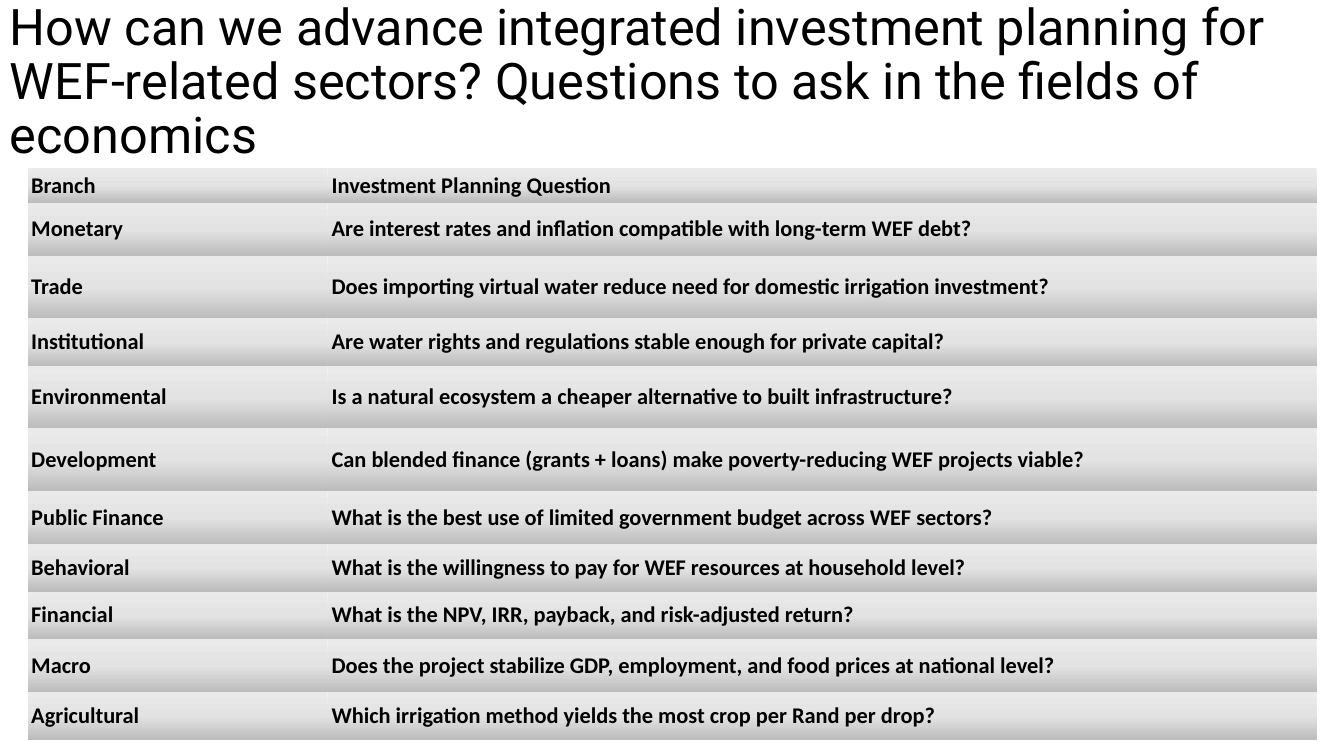
from copy import deepcopy

from pptx import Presentation
from pptx.dml.color import RGBColor
from pptx.enum.text import MSO_ANCHOR, MSO_AUTO_SIZE
from pptx.oxml.ns import qn
from pptx.util import Pt

MIDDLE = MSO_ANCHOR.MIDDLE
NO_FIT = MSO_AUTO_SIZE.NONE
PX = 9144
PLAIN = "{2D5ABB26-0587-4C30-8999-92F81FD0307C}"
INK = "000000"
SHADE = [(0, "EBEAEA"), (0.5, "E4E3E3"), (1, "BDBCBC")]

TITLE = ("How can we advance integrated investment planning for WEF-related sectors? "
         "Questions to ask in the fields of economics")
ROWS = [
    (34, "Branch", "Investment Planning Question"),
    (53, "Monetary", "Are interest rates and inflation compatible with long-term WEF debt?"),
    (62, "Trade", "Does importing virtual water reduce need for domestic irrigation investment?"),
    (47, "Institutional", "Are water rights and regulations stable enough for private capital?"),
    (62, "Environmental", "Is a natural ecosystem a cheaper alternative to built infrastructure?"),
    (62, "Development", "Can blended finance (grants + loans) make poverty-reducing WEF projects viable?"),
    (53, "Public Finance", "What is the best use of limited government budget across WEF sectors?"),
    (47, "Behavioral", "What is the willingness to pay for WEF resources at household level?"),
    (47, "Financial", "What is the NPV, IRR, payback, and risk-adjusted return?"),
    (53, "Macro", "Does the project stabilize GDP, employment, and food prices at national level?"),
    (47, "Agricultural", "Which irrigation method yields the most crop per Rand per drop?"),
]


def hue(code):
    """Turn a hex string into a colour."""
    return RGBColor.from_string(code)


def apply(item, values):
    """Set each named value on an item."""
    for name, value in values.items():
        setattr(item, name, value)


class Deck:
    """Holds the text styles and the current slide."""

    def __init__(self, wide, high):
        """Open a deck with one blank slide."""
        self.show = Presentation()
        apply(self.show, {"slide_width": wide * PX, "slide_height": high * PX})
        self.slide = self.show.slides.add_slide(self.show.slide_layouts[6])
        self.styles = {
            "title": {"name": "Roboto", "size": Pt(36), "bold": False},
            "cell": {"name": "Calibri", "size": Pt(16), "bold": True},
        }

    def label(self, frame, text, style):
        """Put styled text into a text frame."""
        line = frame.paragraphs[0]
        run = line.add_run()
        run.text = text
        apply(run.font, self.styles[style])
        run.font.color.rgb = hue(INK)
        return line

    def title(self, text, *area):
        """Add the heading."""
        frame = self.slide.shapes.add_textbox(*(n * PX for n in area)).text_frame
        apply(frame, {"word_wrap": True, "auto_size": NO_FIT, "vertical_anchor": MIDDLE})
        self.label(frame, text, "title").line_spacing = 0.9

    def shade(self, cell):
        """Fill a cell with the grey gradient."""
        fill = cell.fill
        fill.gradient()
        fill.gradient_angle = 270
        stops = cell._tc.find(".//" + qn("a:gsLst"))
        stops.append(deepcopy(stops[0]))
        for stop, (place, code) in zip(fill.gradient_stops, SHADE):
            stop.position = place
            stop.color.rgb = hue(code)

    def table(self, rows, left, top, widths):
        """Add a table of rows that each start with a height."""
        area = (left, top, sum(widths), sum(row[0] for row in rows))
        frame = self.slide.shapes.add_table(len(rows), len(widths), *(n * PX for n in area))
        for mark in frame.element.iter(qn("a:tableStyleId")):
            mark.text = PLAIN
        grid = frame.table
        apply(grid, {"first_row": False, "horz_banding": False})
        for column, width in zip(grid.columns, widths):
            column.width = width * PX
        for line, (height, *texts) in zip(grid.rows, rows):
            line.height = height * PX
            for index, (cell, text) in enumerate(zip(line.cells, texts)):
                apply(cell, {"margin_left": (3 + index) * PX, "margin_right": 4 * PX,
                             "margin_top": 3 * PX, "margin_bottom": 3 * PX,
                             "vertical_anchor": MIDDLE})
                self.label(cell.text_frame, text, "cell")
                self.shade(cell)


def main():
    """Build and save the slide."""
    deck = Deck(1333, 750)
    deck.title(TITLE, 0, 14, 1334, 137)
    deck.table(ROWS, 28, 167, [297, 981])
    deck.show.save("out.pptx")


if __name__ == "__main__":
    main()
